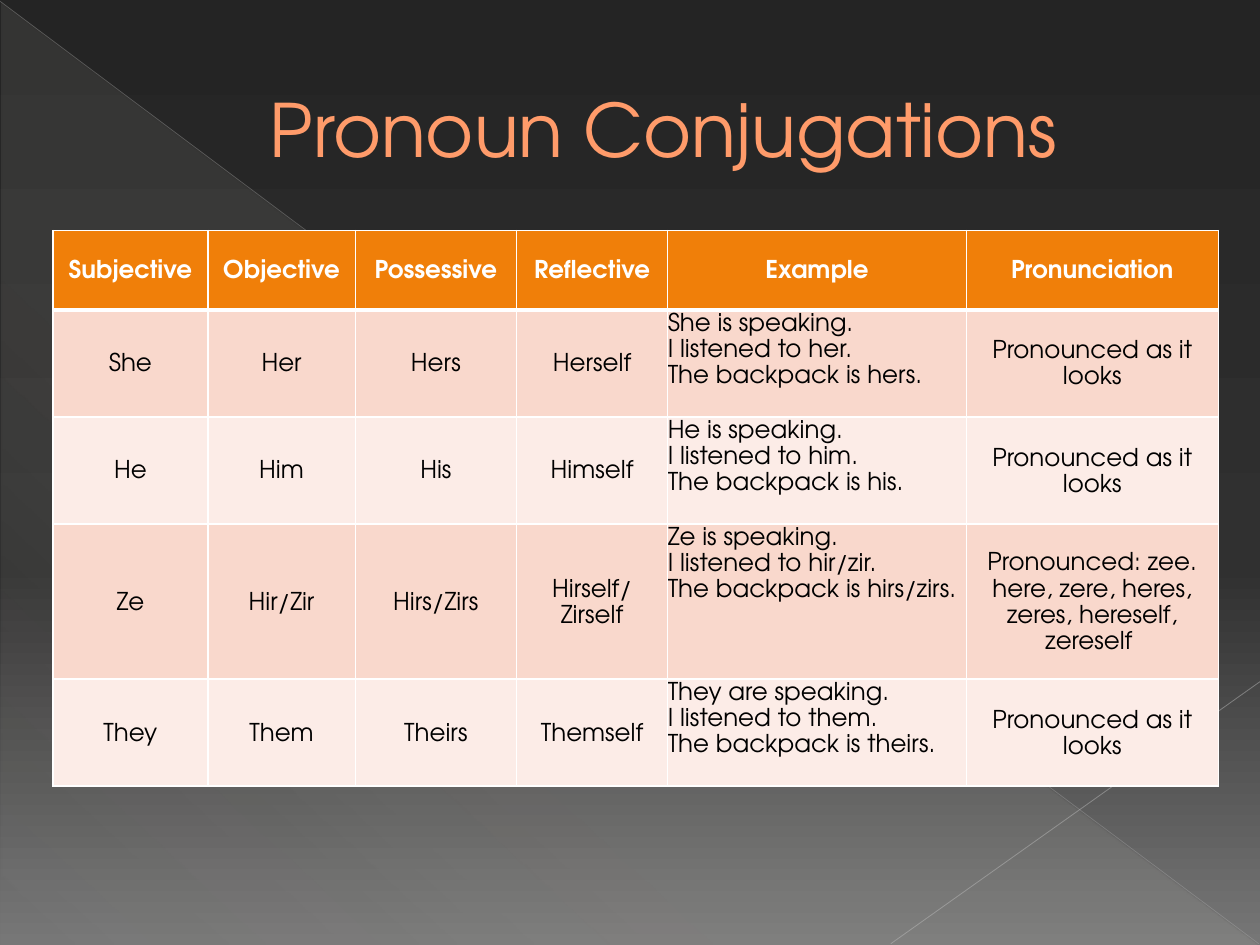
"""Build a slide with a table of pronoun conjugations."""
from lxml import etree
from pptx import Presentation
from pptx import util as u
from pptx.dml.color import RGBColor
from pptx.enum import shapes, text
from pptx.oxml import ns

FONT = "TeX Gyre Adventor"
WHITE = RGBColor(0xFF, 0xFF, 0xFF)
BLACK = RGBColor(0x00, 0x00, 0x00)
CORAL = RGBColor(0xFF, 0x9B, 0x6A)
BROWN = RGBColor(0xA6, 0x58, 0x06)
ORANGE = RGBColor(0xF0, 0x7F, 0x09)
ROSE = RGBColor(0xF9, 0xD8, 0xCC)
BLUSH = RGBColor(0xFC, 0xEC, 0xE7)
NIGHT = RGBColor(0x24, 0x24, 0x24)
CHARCOAL = RGBColor(0x30, 0x30, 0x30)
GREY = RGBColor(0x76, 0x76, 0x76)
SAND = RGBColor(0xE3, 0xDE, 0xD1)
SILVER = RGBColor(0xB6, 0xB6, 0xB6)
PALE = RGBColor(0xBF, 0xBF, 0xBF)

CENTER, LEFT = text.PP_ALIGN.CENTER, text.PP_ALIGN.LEFT
MIDDLE, TOP = text.MSO_ANCHOR.MIDDLE, text.MSO_ANCHOR.TOP

HEADERS = ("Subjective", "Objective", "Possessive", "Reflective", "Example", "Pronunciation")
EXAMPLE = HEADERS.index("Example")
AS_WRITTEN = "Pronounced as it looks"
PRONOUNS = (
    ("She", "Her", "Hers", "Herself", "is", AS_WRITTEN),
    ("He", "Him", "His", "Himself", "is", AS_WRITTEN),
    ("Ze", "Hir/Zir", "Hirs/Zirs", "Hirself/\nZirself", "is",
     "Pronounced: zee. here, zere, heres, zeres, hereself, zereself "),
    ("They", "Them", "Theirs", "Themself", "are", AS_WRITTEN),
)


def add_node(parent, tag, **attributes):
    """Append a drawing element to parent."""
    node = etree.SubElement(parent, ns.qn(tag))
    for name, value in attributes.items():
        node.set(name, str(value))
    return node


def add_color(parent, color, opacity=100):
    """Append a colour with an opacity in percent."""
    node = add_node(parent, "a:srgbClr", val=color)
    if opacity < 100:
        add_node(node, "a:alpha", val=opacity * 1000)


def set_gradient(fill, parent, stops, angle):
    """Fill parent with a clockwise linear gradient of (position, colour, opacity) stops."""
    fill.gradient()
    gradient = parent.find(ns.qn("a:gradFill"))
    stop_list = gradient.find(ns.qn("a:gsLst"))
    for stop in list(stop_list):
        stop_list.remove(stop)
    for position, color, opacity in stops:
        add_color(add_node(stop_list, "a:gs", pos=position * 1000), color, opacity)
    gradient.find(ns.qn("a:lin")).set("ang", str(angle * 60000))


def write(frame, words, size=14, color=BLACK, bold=False, align=CENTER, anchor=MIDDLE, spacing=None):
    """Write one paragraph per line of words."""
    frame.word_wrap = True
    frame.vertical_anchor = anchor
    for number, line in enumerate(words.split("\n")):
        paragraph = frame.add_paragraph() if number else frame.paragraphs[0]
        paragraph.alignment = align
        paragraph.line_spacing = spacing
        run = paragraph.add_run()
        run.text = line
        run.font.name, run.font.size, run.font.bold = FONT, u.Pt(size), bold
        run.font.color.rgb = color


class SlideBuilder:
    """Draw styled elements on a grid of 100 columns and 75 rows."""

    def __init__(self):
        """Start a presentation with one blank slide."""
        self.presentation = Presentation()
        self.presentation.slide_width, self.presentation.slide_height = u.Inches(10), u.Inches(7.5)
        self.slide = self.presentation.slides.add_slide(self.presentation.slide_layouts[6])

    def grid(self, *cells):
        """Turn grid units into lengths."""
        column = self.presentation.slide_width / 100
        return [u.Emu(round(cell * column)) for cell in cells]

    def background(self, stops, angle):
        """Fill the slide with a gradient."""
        fill = self.slide.background.fill
        fill.solid()
        properties = self.slide.element.find(".//" + ns.qn("p:bgPr"))
        set_gradient(fill, properties, stops, angle)

    def triangle(self, box, stops, angle):
        """Add a right triangle with a gradient."""
        shape = self.slide.shapes.add_shape(shapes.MSO_SHAPE.RIGHT_TRIANGLE, *self.grid(*box))
        shape.shadow.inherit = False
        shape.line.fill.background()
        set_gradient(shape.fill, shape.element.spPr, stops, angle)

    def line(self, ends, color, width, opacity):
        """Add a translucent straight line."""
        connector = self.slide.shapes.add_connector(shapes.MSO_CONNECTOR.STRAIGHT, *self.grid(*ends))
        connector.line.width = u.Pt(width)
        connector.line.color.rgb = color
        properties = connector.element.spPr
        add_node(properties.find(".//" + ns.qn("a:srgbClr")), "a:alpha", val=opacity * 1000)
        add_node(properties, "a:effectLst")

    def title(self, box, words, indent):
        """Add the outlined title."""
        frame = self.slide.shapes.add_textbox(*self.grid(*box)).text_frame
        write(frame, words, size=42, color=CORAL)
        paragraph = frame.paragraphs[0]
        properties = paragraph._p.get_or_add_pPr()
        properties.set("marL", str(self.grid(indent)[0]))
        properties.set("indent", "0")
        run_properties = paragraph.runs[0].font._element
        outline = add_node(run_properties, "a:ln", w=u.Pt(0.5))
        add_color(add_node(outline, "a:solidFill"), BROWN)
        run_properties.insert(0, outline)

    def cell(self, cell, words, fill, flush=False, top=1, bottom=1, **style):
        """Fill, border and write one table cell."""
        across, down = self.grid(0, 0) if flush else self.grid(0.9, 0.4)
        cell.margin_left = cell.margin_right = across
        cell.margin_top = cell.margin_bottom = down
        properties = cell._tc.get_or_add_tcPr()
        for side, width in (("L", 1), ("R", 1), ("T", top), ("B", bottom)):
            border = add_node(properties, "a:ln" + side, w=u.Pt(width))
            add_color(add_node(border, "a:solidFill"), WHITE)
        cell.fill.solid()
        cell.fill.fore_color.rgb = fill
        write(cell.text_frame, words, spacing=1.15, **style)
        cell.vertical_anchor = style.get("anchor", MIDDLE)

    def table(self, box, widths, heights):
        """Add the conjugation table."""
        table = self.slide.shapes.add_table(len(heights), len(widths), *self.grid(*box)).table
        for column, width in zip(table.columns, self.grid(*widths)):
            column.width = width
        for row, height in zip(table.rows, self.grid(*heights)):
            row.height = height
        for column, header in enumerate(HEADERS):
            self.cell(table.cell(0, column), header, ORANGE, column == EXAMPLE,
                      bottom=3, color=WHITE, bold=True)
        for row, forms in enumerate(PRONOUNS, start=1):
            fill = ROSE if row % 2 else BLUSH
            subject, target, owner, _, verb, _ = forms
            sentences = (f"{subject} {verb} speaking.\nI listened to {target.lower()}.\n"
                         f"The backpack is {owner.lower()}.")
            for column, form in enumerate(forms):
                cell, top = table.cell(row, column), 3 if row == 1 else 1
                if column == EXAMPLE:
                    self.cell(cell, sentences, fill, True, top, align=LEFT, anchor=TOP)
                else:
                    self.cell(cell, form, fill, top=top)


def main():
    """Build and save the slide."""
    builder = SlideBuilder()
    builder.background([(0, NIGHT, 100), (60, CHARCOAL, 100), (100, GREY, 100)], 90)
    builder.triangle((0.1, 0.2, 99.8, 74.8), [(0, SAND, 10), (70, SAND, 8), (100, SAND, 1)], 133)
    builder.line((0, 0.1, 99.9, 74.9), SILVER, 0.39, 35)
    builder.line((100, 54.1, 70.7, 74.9), PALE, 0.47, 45)
    builder.title((5, 4.6, 90, 11.2), "Pronoun Conjugations", 5.3)
    builder.table((4.2, 18.3, 92.5, 44.2), (12.3, 11.7, 12.8, 12, 23.7, 20),
                  (6.3, 8.5, 8.5, 12.3, 8.5))
    builder.presentation.save("out.pptx")


if __name__ == "__main__":
    main()
